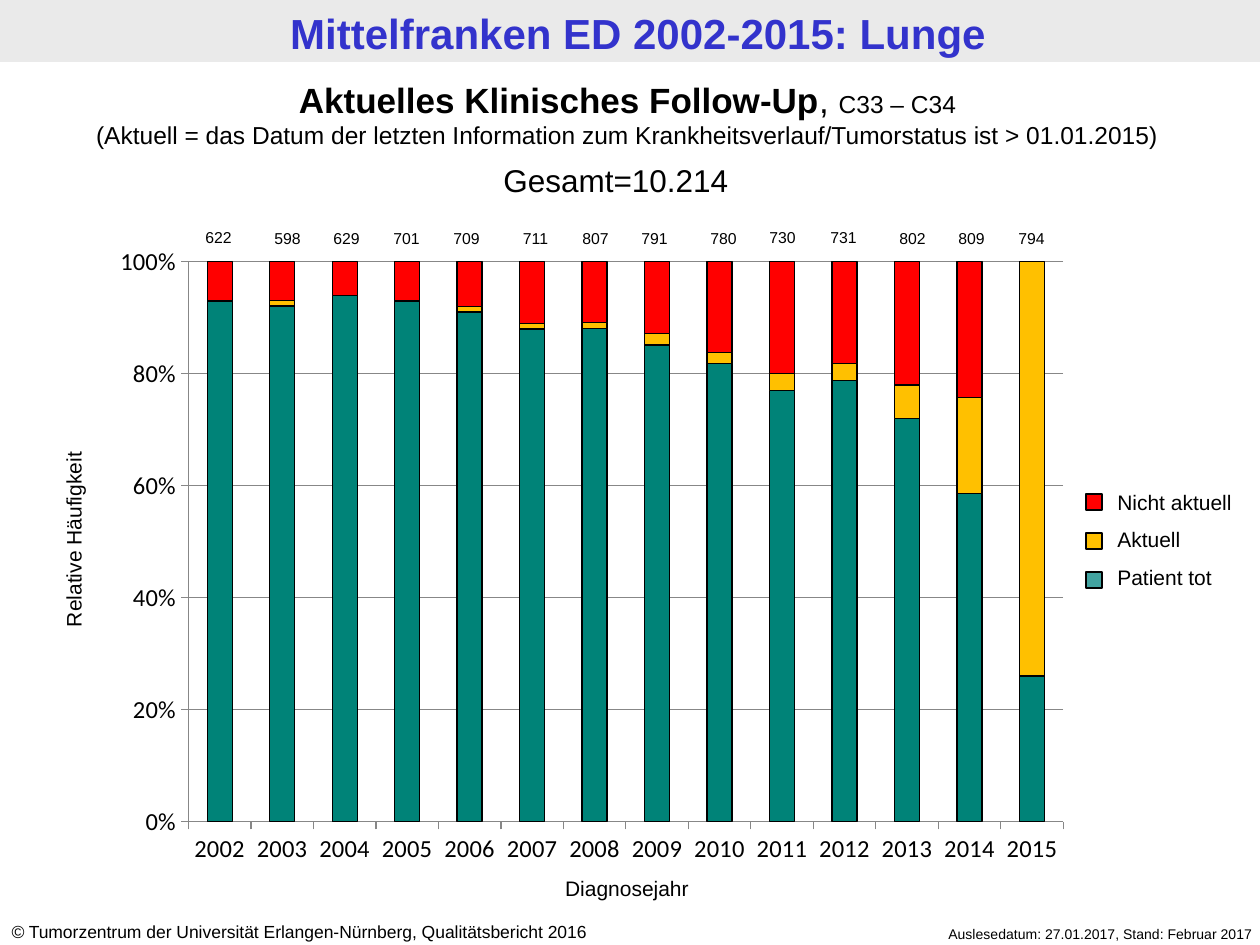
import pptx
import pptx.util
import pptx.dml.color
import pptx.chart.data
import pptx.enum.chart
import pptx.enum.shapes
import pptx.enum.text
import pptx.oxml
import pptx.oxml.ns
from lxml import etree

RGBColor = pptx.dml.color.RGBColor
Pt = pptx.util.Pt
ALIGN = pptx.enum.text.PP_ALIGN
ANCHOR = pptx.enum.text.MSO_ANCHOR

BLACK = RGBColor(0, 0, 0)
BAND = RGBColor(0xEA, 0xEA, 0xEA)
BLUE = RGBColor(0x33, 0x33, 0xCC)
TEAL = RGBColor(0, 0x83, 0x78)
KEY_TEAL = RGBColor(0, 0x83, 0x80)
AMBER = RGBColor(0xFF, 0xC0, 0)
RED = RGBColor(0xFF, 0, 0)
GREY = RGBColor(0x87, 0x87, 0x87)

YEARS = [str(year) for year in range(2002, 2016)]
SERIES = [
    ("Patient tot", TEAL, (93, 93, 93, 93, 91, 88, 89, 86, 81, 77, 78, 72, 58, 26)),
    ("Aktuell", AMBER, (0, 1, 0, 0, 1, 1, 1, 2, 2, 3, 3, 6, 17, 74)),
    ("Nicht aktuell", RED, (7, 7, 6, 7, 8, 11, 11, 13, 16, 20, 18, 22, 24, 0)),
]
CASES = [
    (622, 184), (598, 253), (629, 312), (701, 372), (709, 432), (711, 501), (807, 561),
    (791, 620), (780, 689), (730, 748), (731, 809), (802, 878), (809, 937), (794, 997),
]
RAISED = {622, 730, 731}
KEYS = [(RED, 494, None), (AMBER, 533, None), (KEY_TEAL, 572, 74)]
PLOT = {"x": 0.09, "y": 0.04, "w": 0.89, "h": 0.87}

HEADING = [
    [("Aktuelles Klinisches Follow-Up", 20, True), (", ", 20, False), ("C33 – C34", 14, False)],
    [("(Aktuell = das Datum der letzten Information zum Krankheitsverlauf/Tumorstatus"
      " ist > 01.01.2015)", 14, False)],
]


def px(n):
    return round(n * 914400 / 126)


def box(left, top, width, height):
    return [px(n) for n in (left, top, width, height)]


def add_text(s, place, lines, size, align=ALIGN.LEFT, color=BLACK, bold=None, gap=0):
    sp = s.shapes.add_textbox(*box(*place))
    tf = sp.text_frame
    tf.word_wrap = True
    for i, line in enumerate(lines):
        p = tf.paragraphs[0] if i == 0 else tf.add_paragraph()
        p.alignment = align
        if i and gap:
            p.space_before = Pt(gap)
        p.font.name = "Arial"
        p.font.size = Pt(size)
        p.font.bold = bold
        p.font.color.rgb = color
        for part in [(line, None, None)] if isinstance(line, str) else line:
            r = p.add_run()
            r.text = part[0]
            if part[1]:
                r.font.size = Pt(part[1])
                r.font.bold = part[2]
    return sp


def add_rect(s, place, fill, line=None, alpha=None):
    sp = s.shapes.add_shape(pptx.enum.shapes.MSO_SHAPE.RECTANGLE, *box(*place))
    sp.shadow.inherit = False
    sp.fill.solid()
    sp.fill.fore_color.rgb = fill
    if line is None:
        sp.line.fill.background()
    else:
        sp.line.color.rgb = line
        sp.line.width = Pt(0.75)
    if alpha:
        color = sp.fill._xPr.find(".//" + pptx.oxml.ns.qn("a:srgbClr"))
        etree.SubElement(color, pptx.oxml.ns.qn("a:alpha"), val=str(alpha * 1000))


def add_share_chart(s):
    data = pptx.chart.data.CategoryChartData()
    data.categories = YEARS
    for name, _, values in SERIES:
        data.add_series(name, values)
    kind = pptx.enum.chart.XL_CHART_TYPE.COLUMN_STACKED_100
    chart = s.shapes.add_chart(kind, *box(100, 236, 983, 644), data).chart
    chart.has_legend = False
    chart.has_title = False
    chart.font.name = "Calibri"
    chart.font.size = Pt(18)
    chart.font.color.rgb = BLACK

    plot = chart.plots[0]
    plot.gap_width = 150
    plot.overlap = 100
    plot.vary_by_categories = False
    for series, (_, color, _) in zip(plot.series, SERIES):
        series.format.fill.solid()
        series.format.fill.fore_color.rgb = color
        series.format.line.color.rgb = BLACK
        series.format.line.width = Pt(0.75)

    for axis in (chart.category_axis, chart.value_axis):
        axis.tick_labels.font.size = Pt(14)
        axis.major_tick_mark = pptx.enum.chart.XL_TICK_MARK.OUTSIDE
        axis.minor_tick_mark = pptx.enum.chart.XL_TICK_MARK.NONE
        axis.format.line.color.rgb = GREY
    axis = chart.value_axis
    axis.minimum_scale, axis.maximum_scale, axis.major_unit = 0, 1, 0.2
    axis.tick_labels.number_format = "0%"
    axis.tick_labels.number_format_is_linked = False
    axis.has_major_gridlines = True
    axis.major_gridlines.format.line.color.rgb = GREY

    qn = pptx.oxml.ns.qn
    area = chart._chartSpace.chart.plotArea
    for old in area.findall(qn("c:layout")):
        area.remove(old)
    layout = etree.Element(qn("c:layout"))
    area.insert(0, layout)
    manual = etree.SubElement(layout, qn("c:manualLayout"))
    settings = {"layoutTarget": "inner", "xMode": "edge", "yMode": "edge", **PLOT}
    for tag, value in settings.items():
        etree.SubElement(manual, qn("c:" + tag), val=str(value))


def main():
    prs = pptx.Presentation()
    prs.slide_width, prs.slide_height = px(1260), px(945)
    s = prs.slides.add_slide(prs.slide_layouts[6])

    add_rect(s, (0, 0, 1260, 62), BAND)
    title = add_text(s, (8, 1, 1260, 62), ["Mittelfranken ED 2002-2015: Lunge"], 24,
                     ALIGN.CENTER, BLUE, True)
    title.text_frame.vertical_anchor = ANCHOR.BOTTOM
    title.text_frame.margin_top = title.text_frame.margin_bottom = px(5)

    source = add_text(s, (-1, 915, 660, 34), [[
        ("©", None, None),
        (" Tumorzentrum der Universität Erlangen-Nürnberg, Qualitätsbericht 2016", None, None),
    ]], 10)
    source.text_frame.paragraphs[0].runs[0].font.italic = True
    add_text(s, (838, 919, 427, 30), ["Auslesedatum: 27.01.2017, Stand: Februar 2017"], 8,
             ALIGN.RIGHT)

    add_share_chart(s)
    label = add_text(s, (-78, 520, 304, 39), ["Relative Häufigkeit"], 12, ALIGN.CENTER)
    label.rotation = 270
    add_text(s, (485, 869, 284, 39), ["Diagnosejahr"], 12, ALIGN.CENTER)

    add_text(s, (-5, 72, 1265, 84), HEADING, 14, ALIGN.CENTER)
    add_text(s, (491, 155, 277, 50), ["Gesamt=10.214"], 18)

    add_text(s, (1105, 483, 179, 115), [name for name, _, _ in reversed(SERIES)], 12, gap=7)
    for color, top, alpha in KEYS:
        add_rect(s, (1086, top, 16, 16), color, BLACK, alpha)

    for count, left in CASES:
        top = 222 if count in RAISED else 223
        add_text(s, (left, top, 69, 31), [str(count)], 9, ALIGN.CENTER)

    prs.save("out.pptx")


if __name__ == "__main__":
    main()
